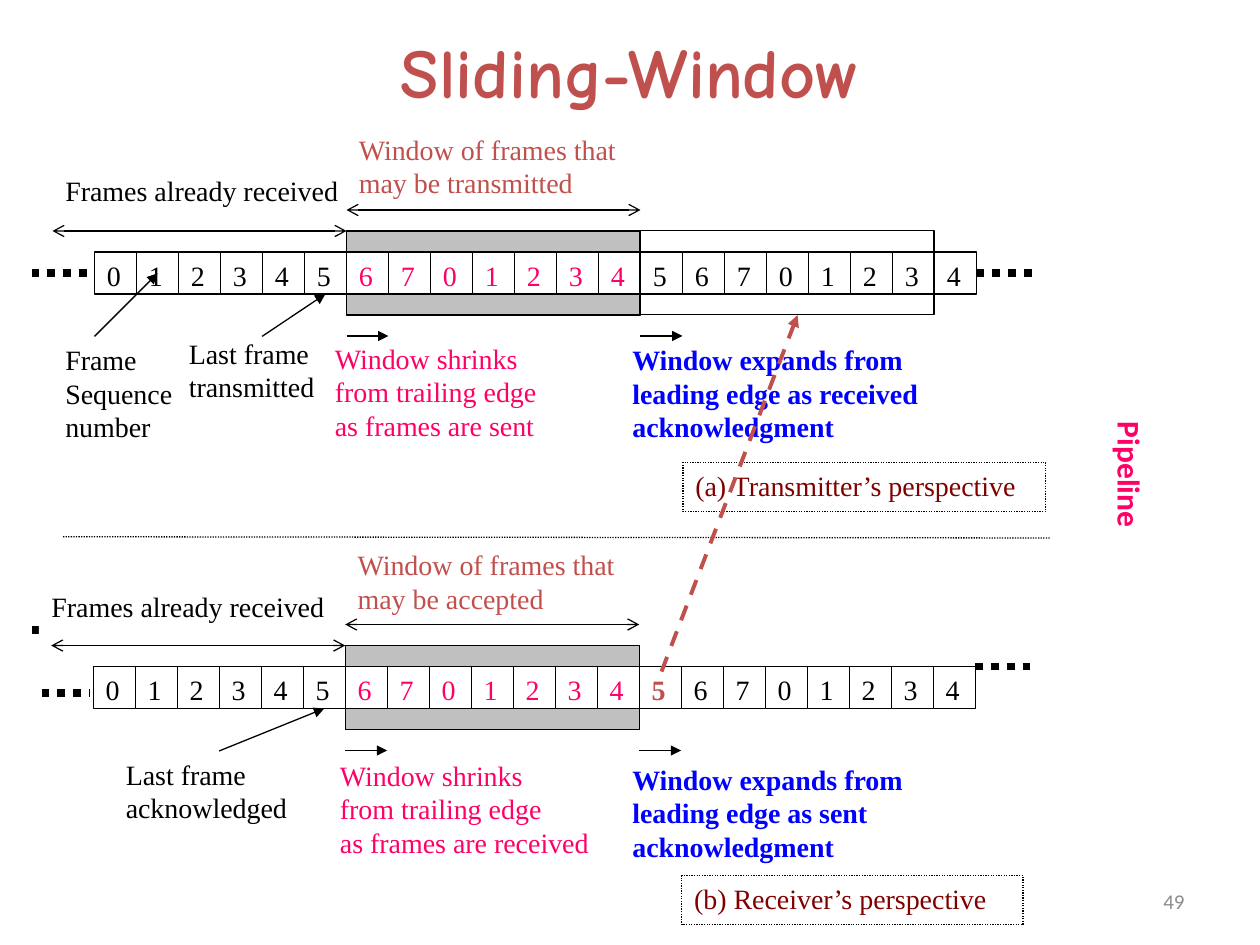
from collections import namedtuple
from dataclasses import dataclass

from lxml import etree
from pptx import Presentation
from pptx.dml.color import RGBColor
from pptx.enum.dml import MSO_LINE
from pptx.enum.shapes import MSO_CONNECTOR, MSO_SHAPE
from pptx.enum.text import MSO_ANCHOR, MSO_AUTO_SIZE, PP_ALIGN
from pptx.oxml.ns import qn
from pptx.util import Inches, Pt

RECTANGLE, STRAIGHT = MSO_SHAPE.RECTANGLE, MSO_CONNECTOR.STRAIGHT
DOTTED, DASHED = MSO_LINE.ROUND_DOT, MSO_LINE.DASH
LEFT, CENTER, RIGHT = PP_ALIGN.LEFT, PP_ALIGN.CENTER, PP_ALIGN.RIGHT
TOP, MIDDLE = MSO_ANCHOR.TOP, MSO_ANCHOR.MIDDLE
BOTTOM_SIDE = 2

Box = namedtuple("Box", "left top width height")
Label = namedtuple("Label", "box lines color bold", defaults=(False,))


@dataclass(frozen=True)
class Theme:
    ink: str = "000000"
    paper: str = "FFFFFF"
    shade: str = "C0C0C0"
    accent: str = "C0504D"
    pink: str = "FF0066"
    blue: str = "0000FF"
    maroon: str = "800000"
    muted: str = "8C8C8C"
    title_font: str = "Comic Neue"
    diagram_font: str = "Times New Roman"
    plain_font: str = "Calibri"
    title_size: int = 40
    side_size: int = 18
    diagram_size: int = 16
    number_size: int = 12
    thin: float = 0.75
    medium: float = 2.25
    thick: float = 4.5


THEME = Theme()

CELL = 1 / 3
FRAMES = [number % 8 for number in range(21)]
WINDOW_START, WINDOW_SIZE = 6, 7
WINDOW_END = WINDOW_START + WINDOW_SIZE
LAST_FRAME = WINDOW_START - 1
ROW_WIDTH = len(FRAMES) * CELL

# Label boxes and points are measured from the top left of the row of frames.
TRANSMITTER = {
    "labels": [
        Label(Box(-0.33, -0.67, 2.5, 0.42), ["Frames already received"], THEME.ink),
        Label(Box(2, -1, 2.34, 0.6), ["Window of frames that", "may be transmitted"], THEME.accent),
        Label(Box(-0.33, 0.67, 1.17, 1), ["Frame", "Sequence", "number"], THEME.ink),
        Label(Box(0.65, 0.62, 1.31, 0.67), ["Last frame", "transmitted"], THEME.ink),
        Label(Box(1.81, 0.66, 2, 0.83),
              ["Window shrinks", "from trailing edge", "as frames are sent"], THEME.pink),
        Label(Box(4.17, 0.67, 2.58, 0.9),
              ["Window expands from", "leading edge as received", "acknowledgment"], THEME.blue, True),
    ],
    "caption": Label(Box(4.67, 1.67, 2.88, 0.39), ["(a) Transmitter’s perspective"], THEME.maroon),
    "dots": [(-0.5, 0.17, 0.5), (ROW_WIDTH, 0.17, 0.5)],
    "pointer_start": (1.33, 0.67),
    "marked": None,
}
RECEIVER = {
    "labels": [
        Label(Box(-0.43, -0.66, 2.5, 0.41), ["Frames already received"], THEME.ink),
        Label(Box(2, -0.99, 2.34, 0.6), ["Window of frames that", "may be accepted"], THEME.accent),
        Label(Box(0.16, 0.67, 1.67, 0.67), ["Last frame", "acknowledged"], THEME.ink),
        Label(Box(1.86, 0.68, 2.33, 0.91),
              ["Window shrinks", "from trailing edge", "as frames are received"], THEME.pink),
        Label(Box(4.18, 0.71, 2.58, 0.9),
              ["Window expands from", "leading edge as sent", "acknowledgment"], THEME.blue, True),
    ],
    "caption": Label(Box(4.67, 1.66, 2.71, 0.39), ["(b) Receiver’s perspective"], THEME.maroon),
    "dots": [(-0.49, -0.29, 0.5), (-0.41, 0.21, 0.38), (ROW_WIDTH, 0, 0.5)],
    "pointer_start": (1, 0.67),
    "marked": WINDOW_END,
}


def emu(box):
    return [Inches(length) for length in box]


def write(shape, lines, font, size, color, bold=False, align=LEFT, anchor=TOP):
    frame = shape.text_frame
    frame.word_wrap = True
    frame.vertical_anchor = anchor
    frame.text = "\n".join(lines)
    for para in frame.paragraphs:
        para.alignment = align
        para.font.name = font
        para.font.size = Pt(size)
        para.font.bold = bold
        para.font.color.rgb = RGBColor.from_string(color)


def add_box(page, box, fill=None, outline=None, dash=None):
    shape = page.shapes.add_shape(RECTANGLE, *emu(box))
    shape.shadow.inherit = False
    if fill:
        shape.fill.solid()
        shape.fill.fore_color.rgb = RGBColor.from_string(fill)
    else:
        shape.fill.background()
    if outline:
        shape.line.color.rgb = RGBColor.from_string(outline)
        shape.line.width = Pt(THEME.thin)
        shape.line.dash_style = dash
    else:
        shape.line.fill.background()
    return shape


def add_label(page, label, left, top, outline=None, dash=None):
    box = label.box._replace(left=left + label.box.left, top=top + label.box.top)
    shape = add_box(page, box, THEME.paper, outline, dash)
    write(shape, label.lines, THEME.diagram_font, THEME.diagram_size, label.color, label.bold)


def add_line(page, start, end, color=THEME.ink, width=THEME.thin, dash=None, head=None, tail=None):
    line = page.shapes.add_connector(STRAIGHT, *emu((*start, *end)))
    line.line.color.rgb = RGBColor.from_string(color)
    line.line.width = Pt(width)
    line.line.dash_style = dash
    outline = line.line._get_or_add_ln()
    for tag, kind in (("a:headEnd", head), ("a:tailEnd", tail)):
        if kind:
            etree.SubElement(outline, qn(tag)).set("type", kind)
    etree.SubElement(line._element.spPr, qn("a:effectLst"))
    return line


def add_frame_row(page, box, marked):
    """Draw the numbered frames and return their shapes."""
    cells = []
    for index, number in enumerate(FRAMES):
        cell = add_box(page, Box(box.left + index * CELL, box.top, CELL, box.height),
                       THEME.paper, THEME.ink)
        in_window = WINDOW_START <= index < WINDOW_END
        color = THEME.accent if index == marked else THEME.pink if in_window else THEME.ink
        write(cell, [str(number)], THEME.diagram_font, THEME.diagram_size, color, index == marked)
        cells.append(cell)
    return cells


def add_perspective(page, box, side):
    """Draw one side of the protocol around the row of frames given by box."""
    left, top = box.left, box.top
    trailing = left + WINDOW_START * CELL
    leading = left + WINDOW_END * CELL
    window_top = top - CELL / 2
    add_box(page, Box(trailing, window_top, WINDOW_SIZE * CELL, 2 * CELL), THEME.shade, THEME.ink)
    cells = add_frame_row(page, box, side["marked"])
    for across, down, length in side["dots"]:
        start = (left + across, top + down)
        add_line(page, start, (start[0] + length, start[1]), width=THEME.thick, dash=DOTTED)
    for label in side["labels"]:
        add_label(page, label, left, top)
    add_label(page, side["caption"], left, top, THEME.ink, DOTTED)

    spans = ((trailing - WINDOW_SIZE * CELL, trailing, window_top),
             (trailing, leading, top - CELL))
    for begin, end, height in spans:
        add_line(page, (begin, height), (end, height), head="arrow", tail="arrow")
    for edge in (trailing, leading):
        add_line(page, (edge, top + 2 * CELL), (edge + CELL, top + 2 * CELL), tail="triangle")
    across, down = side["pointer_start"]
    pointer = add_line(page, (left + across, top + down),
                       (left + (LAST_FRAME + 0.5) * CELL, top + CELL), tail="triangle")
    pointer.end_connect(cells[LAST_FRAME], BOTTOM_SIDE)


def add_title(page, box):
    title = page.shapes.title
    title.left, title.top, title.width, title.height = emu(box)
    write(title, ["Sliding-Window"], THEME.title_font, THEME.title_size, THEME.accent,
          True, CENTER, MIDDLE)


def add_side_note(page, box):
    note = page.shapes.add_textbox(*emu(box))
    write(note, ["Pipeline"], THEME.plain_font, THEME.side_size, THEME.pink, True)
    note.text_frame.auto_size = MSO_AUTO_SIZE.SHAPE_TO_FIT_TEXT
    note.text_frame._txBody.bodyPr.set("vert", "eaVert")


def add_page_number(page, box):
    number = page.shapes.add_textbox(*emu(box))
    write(number, ["49"], THEME.plain_font, THEME.number_size, THEME.muted, align=RIGHT, anchor=MIDDLE)


def main():
    deck = Presentation()
    deck.slide_width, deck.slide_height = Inches(10), Inches(7.5)
    page = deck.slides.add_slide(deck.slide_layouts[5])
    add_title(page, Box(0.5, 0.17, 9, 0.78))
    add_page_number(page, Box(7.17, 6.95, 2.33, 0.4))
    add_perspective(page, Box(0.75, 2, ROW_WIDTH, CELL), TRANSMITTER)
    add_perspective(page, Box(0.74, 5.29, ROW_WIDTH, CELL), RECEIVER)
    add_line(page, (0.75, 2.67), (1.25, 2.17), tail="triangle")
    add_line(page, (0.5, 4.26), (8.33, 4.27), dash=DOTTED)
    add_box(page, Box(5.08, 1.83, WINDOW_SIZE * CELL, 2 * CELL), outline=THEME.ink)
    add_line(page, (5.25, 5.33), (6.33, 2.5), THEME.accent, THEME.medium, DASHED, tail="triangle")
    add_side_note(page, Box(8.67, 3.25, 0.5, 1.33))
    deck.save("out.pptx")


if __name__ == "__main__":
    main()
